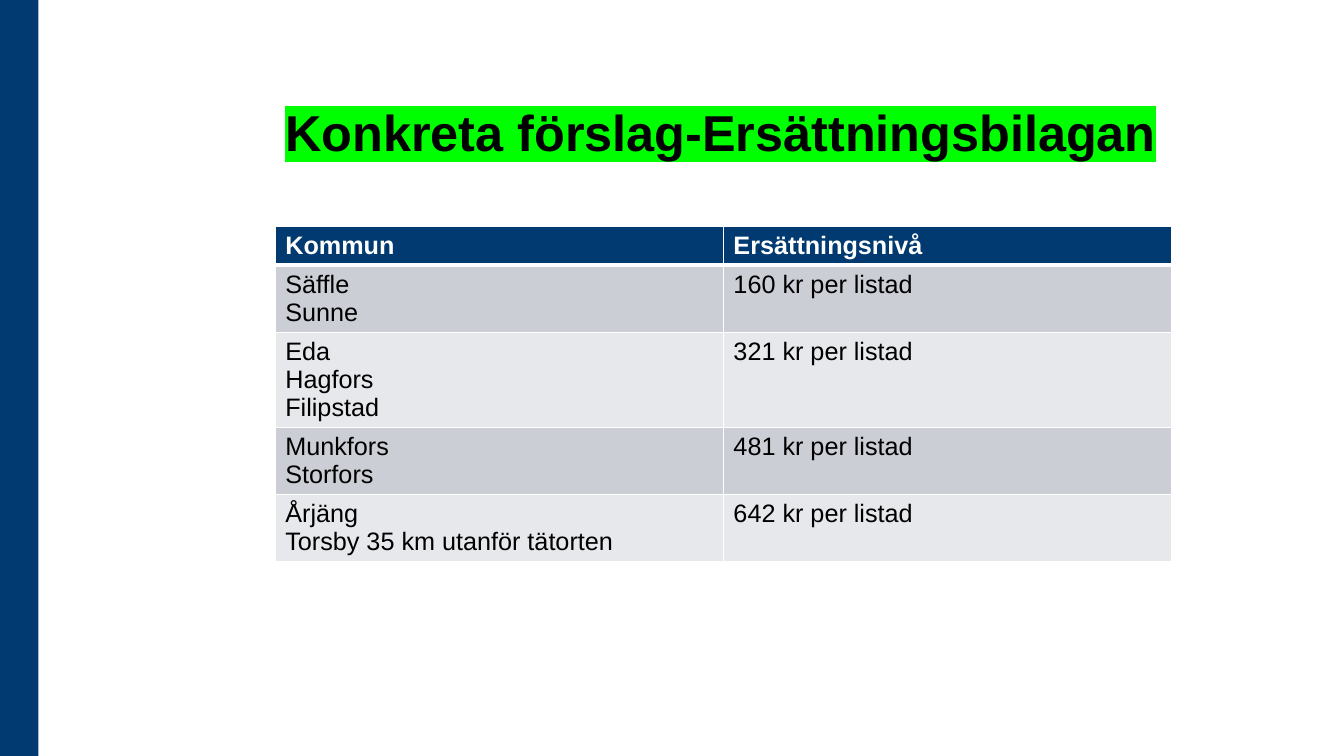
from dataclasses import dataclass

from lxml import etree
from pptx import Presentation
from pptx.dml.color import RGBColor
from pptx.enum.shapes import MSO_SHAPE
from pptx.enum.text import MSO_ANCHOR, MSO_AUTO_SIZE, PP_ALIGN
from pptx.oxml.ns import qn
from pptx.util import Inches, Pt

RECTANGLE = MSO_SHAPE.RECTANGLE
BOTTOM = MSO_ANCHOR.BOTTOM
NO_AUTOFIT = MSO_AUTO_SIZE.NONE
LEFT = PP_ALIGN.LEFT
TITLE_ONLY = 5


@dataclass(frozen=True)
class Theme:
    font: str = "Arial"
    title_size: int = 36
    table_size: int = 18
    navy: str = "003A70"
    black: str = "000000"
    white: str = "FFFFFF"
    green: str = "00FF00"
    bands: tuple = ("CCCED5", "E7E8EB")


class SlideBuilder:
    def __init__(self, prs, theme):
        self.theme = theme
        self.width, self.height = prs.slide_width, prs.slide_height
        self.slide = prs.slides.add_slide(prs.slide_layouts[TITLE_ONLY])

    def box(self, x, y, w, h):
        """Turn percentages of the slide size into lengths."""
        sizes = (self.width, self.height) * 2
        return [int(size * share / 100) for size, share in zip(sizes, (x, y, w, h))]

    def format_runs(self, p, size, color, bold):
        values = {"name": self.theme.font, "size": Pt(size), "bold": bold}
        for r in p.runs:
            for name, value in values.items():
                setattr(r.font, name, value)
            r.font.color.rgb = RGBColor.from_string(color)

    def bar(self, area, color):
        sp = self.slide.shapes.add_shape(RECTANGLE, *self.box(*area))
        sp.shadow.inherit = False
        sp.fill.solid()
        sp.fill.fore_color.rgb = RGBColor.from_string(color)
        sp.line.fill.background()

    def title(self, text, area):
        sp = self.slide.shapes.title
        for name, value in zip(("left", "top", "width", "height"), self.box(*area)):
            setattr(sp, name, value)
        tf = sp.text_frame
        frame = {"word_wrap": True, "auto_size": NO_AUTOFIT, "vertical_anchor": BOTTOM}
        for name, value in frame.items():
            setattr(tf, name, value)
        p = tf.paragraphs[0]
        p.text = text
        p.alignment = LEFT
        self.format_runs(p, self.theme.title_size, self.theme.black, True)
        self.highlight(p.runs[0], self.theme.green)

    def highlight(self, r, color):
        mark = etree.Element(qn("a:highlight"))
        etree.SubElement(mark, qn("a:srgbClr"), val=color)
        r.font.fill  # the highlight follows the text fill
        r._r.get_or_add_rPr().find(qn("a:solidFill")).addnext(mark)

    def borders(self, cell, bottom):
        tc_pr = cell._tc.get_or_add_tcPr()
        for side, width in (("L", 1), ("R", 1), ("T", 1), ("B", bottom)):
            ln = etree.SubElement(tc_pr, qn(f"a:ln{side}"), w=str(Pt(width)))
            fill = etree.SubElement(ln, qn("a:solidFill"))
            etree.SubElement(fill, qn("a:srgbClr"), val=self.theme.white)

    def cell(self, cell, text, fill, color, header):
        self.borders(cell, 3 if header else 1)
        cell.fill.solid()
        cell.fill.fore_color.rgb = RGBColor.from_string(fill)
        p = cell.text_frame.paragraphs[0]
        p.text = text
        self.format_runs(p, self.theme.table_size, color, header)

    def table(self, rows, area, line_share, padding_share):
        """Draw a header and banded rows, each as tall as its lines need."""
        theme = self.theme
        shape = self.slide.shapes.add_table(len(rows), len(rows[0]), *self.box(*area))
        table = shape.table
        for i, texts in enumerate(rows):
            header = i == 0
            lines = max(text.count("\n") + 1 for text in texts)
            share = padding_share + lines * line_share
            table.rows[i].height = int(self.height * share / 100)
            fill = theme.navy if header else theme.bands[(i - 1) % 2]
            color = theme.white if header else theme.black
            for j, text in enumerate(texts):
                self.cell(table.cell(i, j), text, fill, color, header)
        shape.height = sum(row.height for row in table.rows)


ROWS = [
    ("Kommun", "Ersättningsnivå"),
    ("Säffle\nSunne", "160 kr per listad"),
    ("Eda\nHagfors\nFilipstad", "321 kr per listad"),
    ("Munkfors\nStorfors", "481 kr per listad"),
    ("Årjäng\nTorsby 35 km utanför tätorten", "642 kr per listad"),
]


def main():
    prs = Presentation()
    prs.slide_width, prs.slide_height = Inches(13.33), Inches(7.5)
    theme = Theme()
    page = SlideBuilder(prs, theme)
    page.bar((0, 0, 2.85, 100), theme.navy)
    page.title("Konkreta förslag-Ersättningsbilagan", (20.48, 14.13, 69.92, 7.87))
    page.table(ROWS, (20.48, 30, 66.69, 44.5), line_share=3.75, padding_share=1.35)
    prs.save("out.pptx")


if __name__ == "__main__":
    main()
